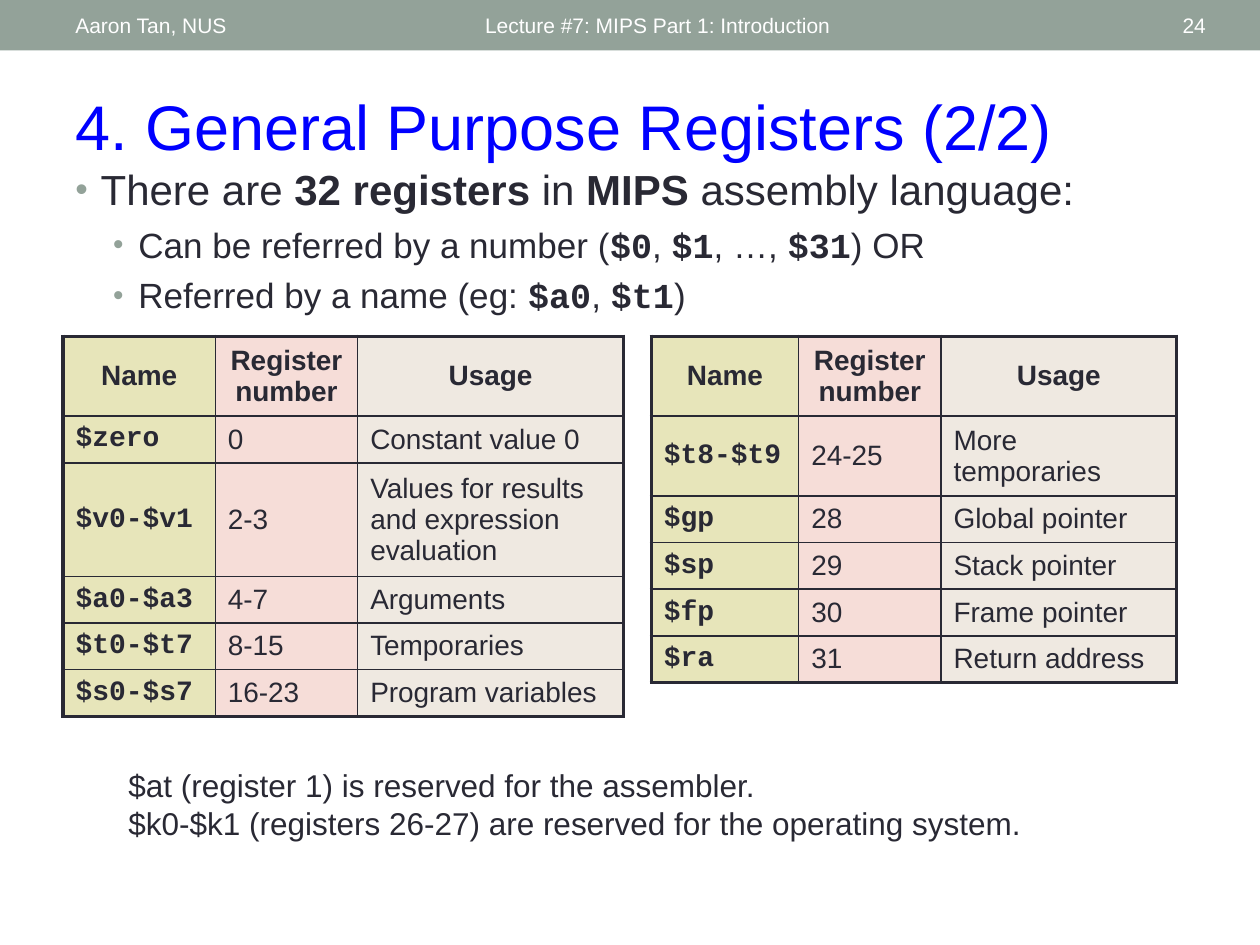
from pptx import Presentation
from pptx.dml.color import RGBColor
from pptx.enum.shapes import MSO_SHAPE
from pptx.enum.text import MSO_ANCHOR, PP_ALIGN
from pptx.oxml.ns import qn
from pptx.util import Cm, Pt
from lxml import etree

RECT = MSO_SHAPE.RECTANGLE
TOP, MID = MSO_ANCHOR.TOP, MSO_ANCHOR.MIDDLE
LEFT, CENTER, RIGHT = PP_ALIGN.LEFT, PP_ALIGN.CENTER, PP_ALIGN.RIGHT
SANS, MONO = "Arial", "Courier New"

COLORS = {
    "bar": "93A299", "white": "FFFFFF", "title": "0000FF", "ink": "292934",
    "name": "E7E5BA", "number": "F6DDD8", "usage": "EFE9E1",
}
FILLS = ("name", "number", "usage")
HEAD = ("Name", "Register number", "Usage")
THIN, THICK = 1, 2.25

LOW = [
    ("$zero", "0", "Constant value 0"),
    ("$v0-$v1", "2-3", "Values for results and expression evaluation"),
    ("$a0-$a3", "4-7", "Arguments"),
    ("$t0-$t7", "8-15", "Temporaries"),
    ("$s0-$s7", "16-23", "Program variables"),
]
HIGH = [
    ("$t8-$t9", "24-25", "More temporaries"),
    ("$gp", "28", "Global pointer"),
    ("$sp", "29", "Stack pointer"),
    ("$fp", "30", "Frame pointer"),
    ("$ra", "31", "Return address"),
]
# Parts between bars are set strong
POINTS = [
    ("There are |32 registers| in |MIPS| assembly language:",
     dict(size=24, indent=0.51)),
    ("Can be referred by a number (|$0|, |$1|, …, |$31|) OR",
     dict(size=20, indent=1.27, level=1, strong=MONO)),
    ("Referred by a name (eg: |$a0|, |$t1|)",
     dict(size=20, indent=1.27, level=1, strong=MONO)),
]
NOTES = [
    "$at (register 1) is reserved for the assembler.",
    "$k0-$k1 (registers 26-27) are reserved for the operating system.",
]


def rgb(key):
    return RGBColor.from_string(COLORS[key])


def add(parent, tag, **attrs):
    return etree.SubElement(parent, qn(tag), attrs)


def write(para, text, size=16, color="ink", font=SANS, bold=False,
          strong=SANS, align=LEFT, level=0, indent=None):
    """Fill a paragraph; an indent in cm also gives it a bullet."""
    para.alignment, para.level = align, level
    for i, part in enumerate(text.split("|")):
        if not part:
            continue
        run = para.add_run()
        run.text = part
        run.font.size = Pt(size)
        run.font.color.rgb = rgb(color)
        run.font.name = strong if i % 2 else font
        run.font.bold = bold or i % 2 == 1
    if indent:
        para.space_before = Pt(5)
        props = para._p.get_or_add_pPr()
        props.set("marL", str(Cm(indent)))
        props.set("indent", str(-Cm(0.51)))
        add(add(props, "a:buClr"), "a:srgbClr", val=COLORS["bar"])
        add(props, "a:buSzPct", val="85000")
        add(props, "a:buFont", typeface=SANS)
        add(props, "a:buChar", char="•")


def box(slide, x, y, w, h, items, anchor=TOP):
    """Text box with one paragraph for each (text, format) item."""
    frame = slide.shapes.add_textbox(Cm(x), Cm(y), Cm(w), Cm(h)).text_frame
    frame.word_wrap = True
    frame.vertical_anchor = anchor
    for i, (text, style) in enumerate(items):
        para = frame.add_paragraph() if i else frame.paragraphs[0]
        write(para, text, **style)


def edge(cell, **widths):
    props = cell._tc.get_or_add_tcPr()
    for side, width in widths.items():
        line = add(props, "a:ln" + side, w=str(Pt(width)))
        fill = add(line, "a:solidFill")
        add(fill, "a:srgbClr", val=COLORS["ink"])


def table(slide, x, y, widths, heights, rows):
    rows = [HEAD] + rows
    last, end = len(rows) - 1, len(widths) - 1
    grid = slide.shapes.add_table(
        len(rows), len(widths), Cm(x), Cm(y),
        Cm(sum(widths)), Cm(sum(heights))).table
    grid.first_row = grid.horz_banding = False
    for col, width in zip(grid.columns, widths):
        col.width = Cm(width)
    for r, row in enumerate(rows):
        grid.rows[r].height = Cm(heights[r])
        for c, text in enumerate(row):
            cell = grid.cell(r, c)
            cell.vertical_anchor = MID
            edge(cell,
                 L=THIN if c else THICK,
                 R=THICK if c == end else THIN,
                 T=THIN if r else THICK,
                 B=THICK if r == last else THIN)
            cell.fill.solid()
            cell.fill.fore_color.rgb = rgb(FILLS[c])
            write(cell.text_frame.paragraphs[0], text,
                  bold=r == 0 or c == 0,
                  font=MONO if r and c == 0 else SANS,
                  align=LEFT if r else CENTER)


def header(slide):
    bar = slide.shapes.add_shape(RECT, 0, 0, Cm(25.4), Cm(1.02))
    bar.shadow.inherit = False
    bar.fill.solid()
    bar.fill.fore_color.rgb = rgb("bar")
    bar.line.fill.background()
    for x, w, text, align in (
            (1.27, 8.05, "Aaron Tan, NUS", LEFT),
            (9.53, 11.43, "Lecture #7: MIPS Part 1: Introduction", LEFT),
            (22.15, 2.41, "24", RIGHT)):
        style = dict(size=12, color="white", align=align)
        box(slide, x, 0.05, w, 0.91, [(text, style)], MID)


def main():
    deck = Presentation()
    deck.slide_width, deck.slide_height = Cm(25.4), Cm(19.05)
    slide = deck.slides.add_slide(deck.slide_layouts[6])

    # Header, title and points
    header(slide)
    box(slide, 1.27, 1.63, 22.86, 1.8,
        [("4. General Purpose Registers (2/2)",
          dict(size=36, color="title"))])
    box(slide, 1.27, 3.18, 22.86, 13.97, POINTS)

    # Register tables
    one, two, three = 0.94, 1.6, 2.29
    table(slide, 1.27, 6.78, (3.07, 2.87, 5.36),
          (two, one, three, one, one, one), LOW)
    table(slide, 13.13, 6.78, (2.97, 2.87, 4.75),
          (two, two, one, one, one, one), HIGH)

    # Reserved registers
    box(slide, 2.34, 15.32, 19.69, 1.8,
        [(note, dict(size=18)) for note in NOTES])
    deck.save("out.pptx")


if __name__ == "__main__":
    main()
